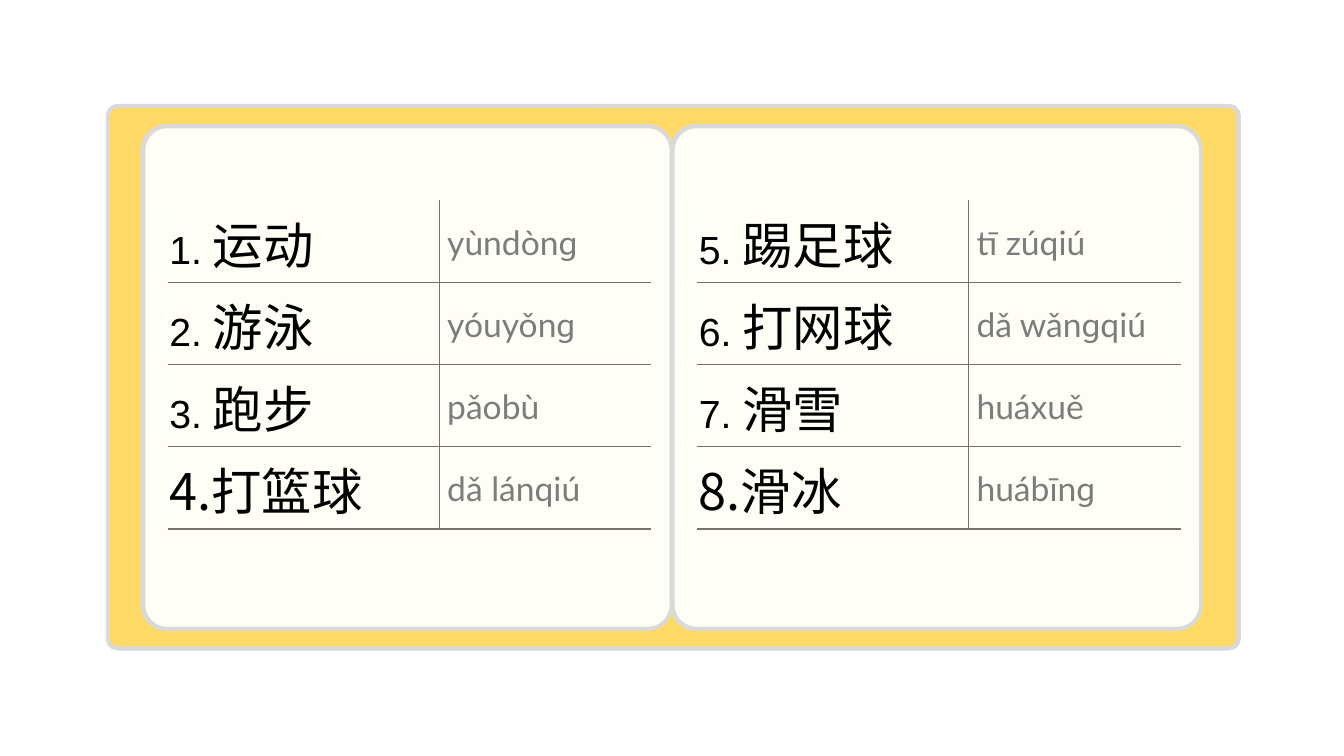
from lxml import etree
from pptx import Presentation
from pptx.dml.color import RGBColor
from pptx.enum.shapes import MSO_SHAPE
from pptx.enum.text import MSO_ANCHOR
from pptx.oxml.ns import qn
from pptx.util import Cm, Pt

ROUNDED = MSO_SHAPE.ROUNDED_RECTANGLE
MIDDLE = MSO_ANCHOR.MIDDLE

COVER_YELLOW = RGBColor(0xFF, 0xD9, 0x66)
PAGE_CREAM = RGBColor(0xFF, 0xFE, 0xF6)
EDGE_GREY = RGBColor(0xD9, 0xD9, 0xD9)
RULE_GREY = RGBColor(0x76, 0x71, 0x71)
PINYIN_GREY = RGBColor(0x7C, 0x7C, 0x7C)
BLACK = RGBColor(0, 0, 0)
WHITE = RGBColor(0xFF, 0xFF, 0xFF)

NUMBER_FONT, HANZI_FONT, PINYIN_FONT = "Arial", "Noto Sans CJK SC", "Lato"

# Each word: number, hanzi, pinyin; one list per page
PAGES = [
    [("1. ", "运动", "yùndònɡ"), ("2. ", "游泳", "yóuyǒnɡ"),
     ("3. ", "跑步", "pǎobù"), ("4.", "打篮球", "dǎ lánqiú")],
    [("5. ", "踢足球", "tī zúqiú"), ("6. ", "打网球", "dǎ wǎnɡqiú"),
     ("7. ", "滑雪", "huáxuě"), ("8.", "滑冰", "huábīnɡ")],
]

PAGE_LEFT, PAGE_TOP, PAGE_WIDTH, PAGE_HEIGHT = 3.61, 3.18, 13.32, 12.67
PAGE_PITCH = 13.34
LIST_INSET, LIST_TOP = 0.63, 5.05
HANZI_WIDTH, PINYIN_WIDTH, ROW_HEIGHT = 6.83, 5.33, 2.07
CELL_INSET, PINYIN_INDENT = 0.03, 0.2


def add_panel(slide, left, top, width, height, rounding, color):
    panel = slide.shapes.add_shape(ROUNDED, Cm(left), Cm(top), Cm(width), Cm(height))
    panel.adjustments[0] = rounding
    panel.shadow.inherit = False
    panel.fill.solid()
    panel.fill.fore_color.rgb = color
    panel.line.color.rgb = EDGE_GREY
    panel.line.width = Pt(3)


def add_run(paragraph, text, font_name, size, color):
    run = paragraph.add_run()
    run.text = text
    run.font.name = font_name
    run.font.size = Pt(size)
    run.font.color.rgb = color
    east_asian = etree.SubElement(run.font._element, qn("a:ea"))
    east_asian.set("typeface", font_name)


def set_borders(cell, left, right, top, bottom):
    properties = cell._tc.get_or_add_tcPr()
    for side, color in zip("LRTB", (left, right, top, bottom)):
        border = etree.SubElement(properties, qn(f"a:ln{side}"), w=str(Pt(1)))
        fill = etree.SubElement(border, qn("a:solidFill"))
        etree.SubElement(fill, qn("a:srgbClr"), val=str(color))


def format_cell(cell, indent):
    cell.vertical_anchor = MIDDLE
    cell.margin_left = Cm(indent)
    cell.margin_right = cell.margin_top = Cm(CELL_INSET)
    cell.margin_bottom = 0
    cell.fill.background()


def add_word_list(slide, left, words):
    table = slide.shapes.add_table(
        len(words), 2, Cm(left), Cm(LIST_TOP),
        Cm(HANZI_WIDTH + PINYIN_WIDTH), Cm(ROW_HEIGHT * len(words))).table
    table.first_row = table.horz_banding = False
    table.columns[0].width = Cm(HANZI_WIDTH)
    table.columns[1].width = Cm(PINYIN_WIDTH)
    for index, (number, hanzi, pinyin) in enumerate(words):
        table.rows[index].height = Cm(ROW_HEIGHT)
        top_rule = RULE_GREY if index else WHITE
        hanzi_cell, pinyin_cell = table.cell(index, 0), table.cell(index, 1)

        set_borders(hanzi_cell, WHITE, RULE_GREY, top_rule, RULE_GREY)
        format_cell(hanzi_cell, CELL_INSET)
        entry = hanzi_cell.text_frame.paragraphs[0]
        if number.endswith(" "):
            add_run(entry, number, NUMBER_FONT, 28, BLACK)
            add_run(entry, hanzi, HANZI_FONT, 36, BLACK)
        else:
            add_run(entry, number + hanzi, HANZI_FONT, 36, BLACK)

        set_borders(pinyin_cell, RULE_GREY, WHITE, top_rule, RULE_GREY)
        format_cell(pinyin_cell, PINYIN_INDENT)
        add_run(pinyin_cell.text_frame.paragraphs[0], pinyin, PINYIN_FONT, 24, PINYIN_GREY)


def main():
    deck = Presentation()
    deck.slide_width, deck.slide_height = Cm(33.87), Cm(19.05)
    slide = deck.slides.add_slide(deck.slide_layouts[6])
    add_panel(slide, 2.72, 2.67, 28.5, 13.67, 0.018, COVER_YELLOW)
    page_lefts = [PAGE_LEFT + PAGE_PITCH * page for page in range(len(PAGES))]
    for left in page_lefts:
        add_panel(slide, left, PAGE_TOP, PAGE_WIDTH, PAGE_HEIGHT, 0.048, PAGE_CREAM)
    for left, words in zip(page_lefts, PAGES):
        add_word_list(slide, left + LIST_INSET, words)
    deck.save("out.pptx")


if __name__ == "__main__":
    main()
